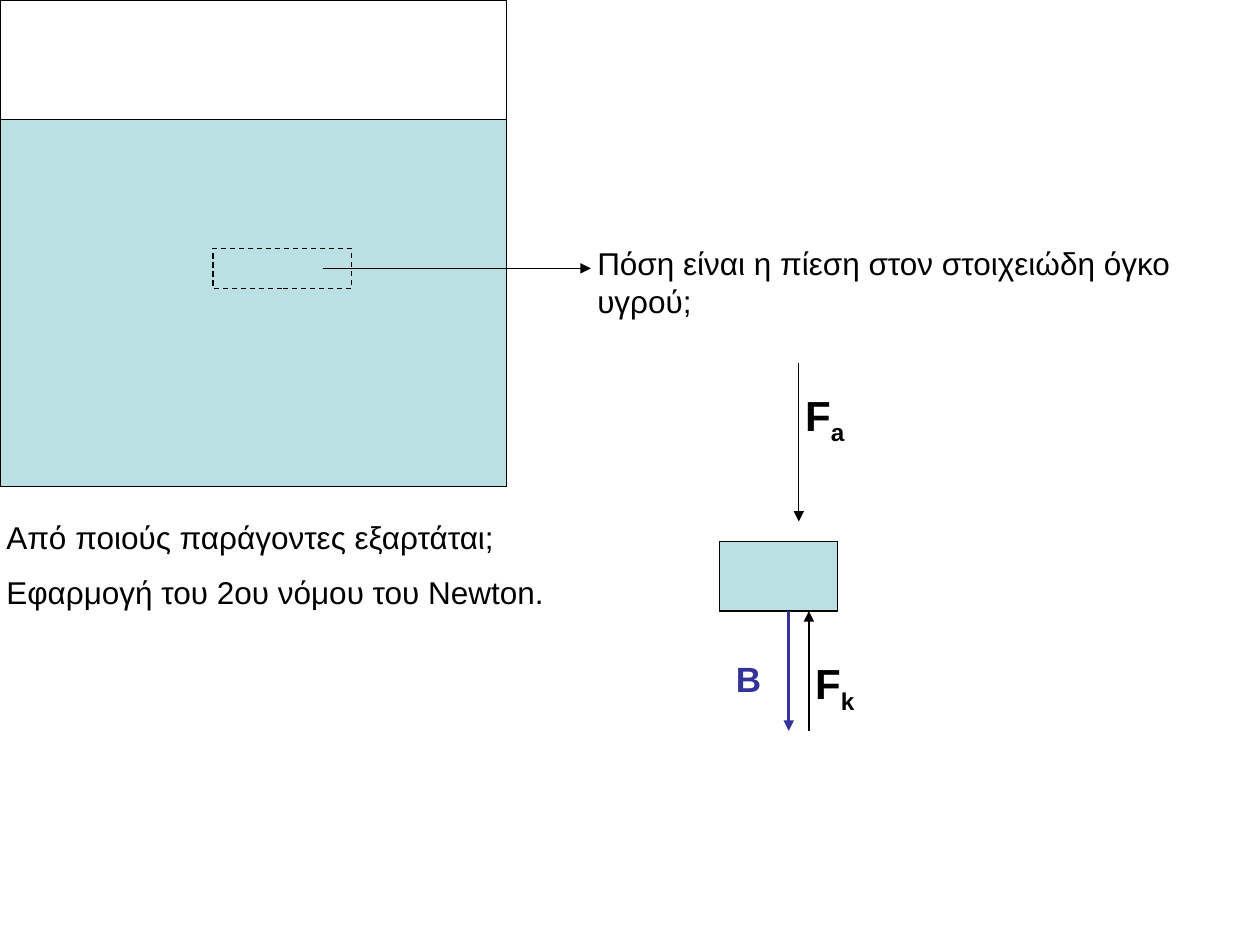
from dataclasses import dataclass

from lxml import etree
from pptx import Presentation
from pptx.dml.color import RGBColor
from pptx.enum.dml import MSO_LINE
from pptx.enum.shapes import MSO_CONNECTOR, MSO_SHAPE
from pptx.enum.text import MSO_AUTO_SIZE
from pptx.oxml.ns import qn
from pptx.util import Inches, Pt

RECTANGLE = MSO_SHAPE.RECTANGLE
STRAIGHT = MSO_CONNECTOR.STRAIGHT
DASH = MSO_LINE.DASH
FIT_SHAPE = MSO_AUTO_SIZE.SHAPE_TO_FIT_TEXT


@dataclass(frozen=True)
class Theme:
    """Colours, font and sizes of the slide."""
    ink: RGBColor = RGBColor(0x00, 0x00, 0x00)
    air: RGBColor = RGBColor(0xFF, 0xFF, 0xFF)
    liquid: RGBColor = RGBColor(0xBB, 0xE0, 0xE3)
    weight: RGBColor = RGBColor(0x33, 0x33, 0x99)
    font: str = "Arial"
    body: int = 18
    weight_label: int = 20
    force_label: int = 24
    thin: float = 0.75
    thick: float = 1.5


THEME = Theme()


def add_box(shapes, left, top, width, height, fill, dash=None):
    """Draw an outlined rectangle."""
    box = shapes.add_shape(RECTANGLE, Inches(left), Inches(top), Inches(width), Inches(height))
    box.shadow.inherit = False
    box.fill.solid()
    box.fill.fore_color.rgb = fill
    box.line.color.rgb = THEME.ink
    box.line.width = Pt(THEME.thin)
    if dash is not None:
        box.line.dash_style = dash


def add_arrow(shapes, start, end, color=THEME.ink, width=THEME.thin):
    """Draw a straight arrow pointing at end."""
    arrow = shapes.add_connector(STRAIGHT, *map(Inches, start + end))
    arrow.line.color.rgb = color
    arrow.line.width = Pt(width)
    etree.SubElement(arrow.line._get_or_add_ln(), qn("a:tailEnd"), type="triangle")
    etree.SubElement(arrow._element.spPr, qn("a:effectLst"))


def add_text(shapes, left, top, width, height, lines, size=THEME.body,
             color=THEME.ink, bold=False, space=10, subscript=None):
    """Write paragraphs, with an optional subscript after the last one."""
    box = shapes.add_textbox(Inches(left), Inches(top), Inches(width), Inches(height))
    frame = box.text_frame
    frame.word_wrap = True
    frame.auto_size = FIT_SHAPE
    frame.margin_left = frame.margin_right = Inches(0.05)
    frame.margin_top = frame.margin_bottom = Inches(0.05)
    frame.text = "\n".join(lines)
    for paragraph in frame.paragraphs:
        paragraph.space_before = Pt(space)
        paragraph.font.name = THEME.font
        paragraph.font.size = Pt(size)
        paragraph.font.bold = bold
        paragraph.font.color.rgb = color
    if subscript:
        index = frame.paragraphs[-1].add_run()
        index.text = subscript
        index.font._element.set("baseline", "-25000")


def add_force_label(shapes, left, top, subscript):
    """Write a force symbol with its subscript."""
    add_text(shapes, left, top, 1.02, 0.54, ["F"], THEME.force_label,
             bold=True, space=14, subscript=subscript)


def add_tank(shapes):
    """Draw the tank, the small volume of liquid and the question about it."""
    add_box(shapes, 0, 0, 4.02, 3.86, THEME.air)
    add_box(shapes, 0, 0.95, 4.02, 2.91, THEME.liquid)
    add_box(shapes, 1.69, 1.97, 1.1, 0.32, THEME.liquid, DASH)
    add_arrow(shapes, (2.56, 2.13), (4.69, 2.13))
    add_text(shapes, 4.69, 1.89, 5.31, 0.68,
             ["Πόση είναι η πίεση στον στοιχειώδη όγκο υγρού;"])


def add_forces(shapes):
    """Draw the small volume with the forces acting on it."""
    add_box(shapes, 5.71, 4.3, 0.94, 0.55, THEME.liquid)
    add_arrow(shapes, (6.26, 4.85), (6.26, 5.8), THEME.weight, THEME.thick)
    add_arrow(shapes, (6.34, 2.88), (6.34, 4.14))
    add_arrow(shapes, (6.42, 5.8), (6.42, 4.85))
    add_text(shapes, 5.79, 5.17, 0.55, 0.41, ["Β"], THEME.weight_label,
             THEME.weight, bold=True, space=12)
    add_force_label(shapes, 6.34, 3.04, "a")
    add_force_label(shapes, 6.42, 5.17, "k")


def main():
    """Build and save the slide."""
    deck = Presentation()
    deck.slide_width, deck.slide_height = Inches(10), Inches(7.5)
    shapes = deck.slides.add_slide(deck.slide_layouts[6]).shapes
    add_tank(shapes.add_group_shape().shapes)
    add_text(shapes, 0, 4.06, 9.02, 0.83,
             ["Από ποιούς παράγοντες εξαρτάται;", "Εφαρμογή του 2ου νόμου του Newton."])
    add_forces(shapes.add_group_shape().shapes)
    deck.save("out.pptx")


if __name__ == "__main__":
    main()
